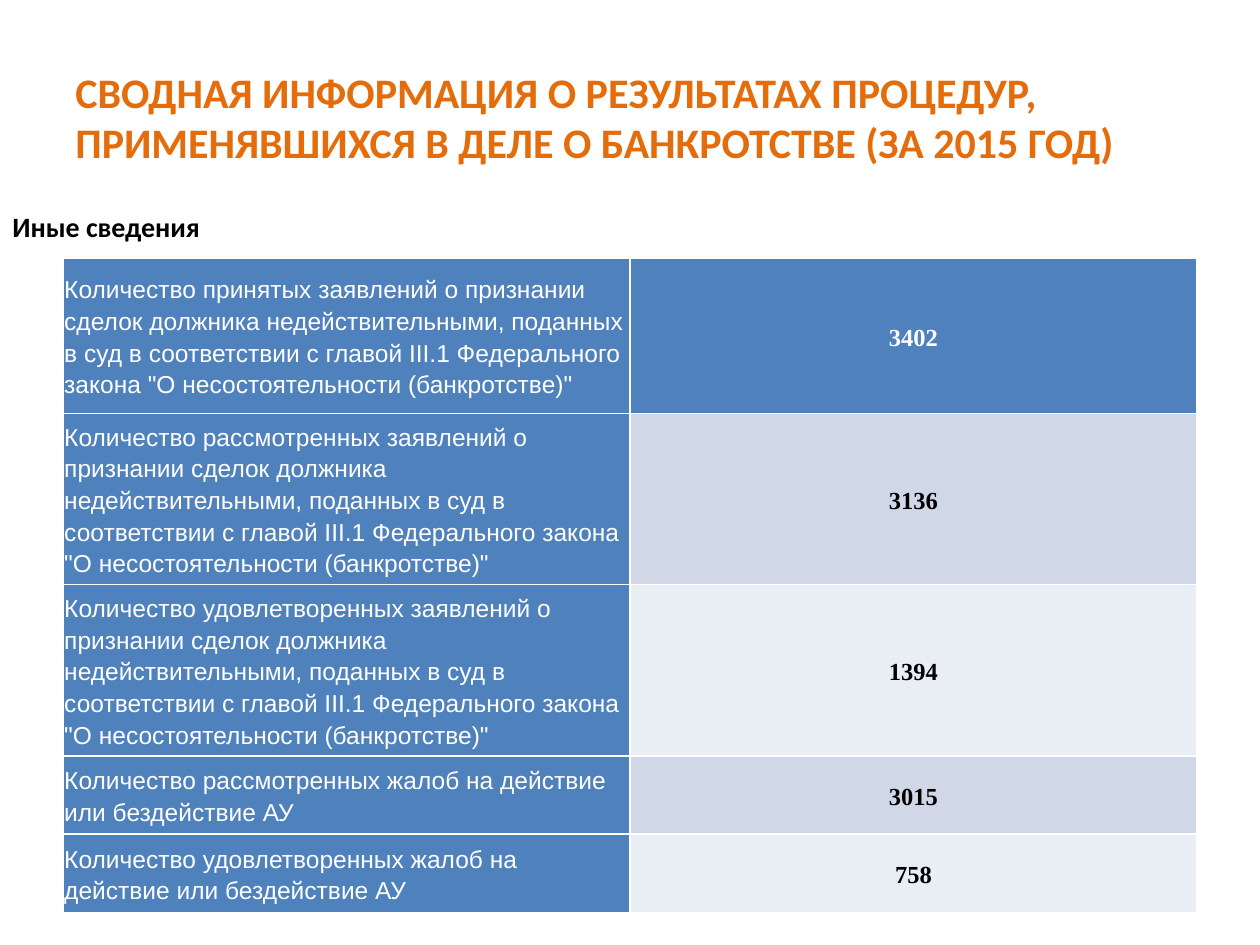
from lxml import etree
from pptx import Presentation
from pptx import util as u
from pptx.dml.color import RGBColor
from pptx.enum import text
from pptx.oxml import ns

COLUMNS, ROWS = 20, 15
WHITE, BLACK, ORANGE, BLUE = "FFFFFF", "000000", "E46C0A", "4F81BD"
BANDS = ("E9EDF4", "D0D8E8")
CLAIMS = ('Количество {} заявлений о признании сделок должника недействительными, '
          'поданных в суд в соответствии с главой III.1 Федерального закона '
          '"О несостоятельности (банкротстве)"')
COMPLAINTS = "Количество {} жалоб на действие или бездействие АУ"
RESULTS = [
    (CLAIMS.format("принятых"), "3402", 2.46),
    (CLAIMS.format("рассмотренных"), "3136", 2.46),
    (CLAIMS.format("удовлетворенных"), "1394", 2.46),
    (COMPLAINTS.format("рассмотренных"), "3015", 1.24),
    (COMPLAINTS.format("удовлетворенных"), "758", 1.24),
]


def color(value):
    return RGBColor.from_string(value)


class SlideBuilder:
    """Holds the presentation, the current slide and its grid and text styles."""

    styles = {
        "title": {"name": "Calibri", "size": u.Pt(24), "bold": True},
        "subtitle": {"name": "Calibri", "size": u.Pt(16), "bold": True},
        "label": {"name": "Arial", "size": u.Pt(14), "bold": False},
        "value": {"name": "Times New Roman", "size": u.Pt(14), "bold": True},
    }

    def __init__(self):
        self.presentation = Presentation()
        self.presentation.slide_width = u.Inches(10)
        self.presentation.slide_height = u.Inches(7.5)
        self.slide = self.presentation.slides.add_slide(self.presentation.slide_layouts[6])

    def x(self, columns):
        return round(self.presentation.slide_width * columns / COLUMNS)

    def y(self, rows):
        return round(self.presentation.slide_height * rows / ROWS)

    def add_text(self, frame, content, style, font_color):
        paragraph = frame.paragraphs[0]
        run = paragraph.add_run()
        run.text = content
        for name, value in self.styles[style].items():
            setattr(run.font, name, value)
        run.font.color.rgb = color(font_color)
        return paragraph

    def text_box(self, area, content, style, font_color, wrap=True):
        left, top, width, height = area
        shape = self.slide.shapes.add_textbox(
            self.x(left), self.y(top), self.x(width), self.y(height))
        shape.text_frame.word_wrap = wrap
        shape.text_frame.vertical_anchor = text.MSO_ANCHOR.MIDDLE
        if not wrap:
            shape.text_frame.auto_size = text.MSO_AUTO_SIZE.SHAPE_TO_FIT_TEXT
        self.add_text(shape.text_frame, content, style, font_color)

    def borders(self, cell):
        properties = cell._tc.get_or_add_tcPr()
        for side in ("lnL", "lnR", "lnT", "lnB"):
            line = etree.SubElement(properties, ns.qn(f"a:{side}"), w=str(u.Pt(1)))
            fill = etree.SubElement(line, ns.qn("a:solidFill"))
            etree.SubElement(fill, ns.qn("a:srgbClr"), val=WHITE)

    def cell(self, cell, content, style, fill, font_color, alignment):
        margins = dict.fromkeys(
            ("margin_left", "margin_right", "margin_top", "margin_bottom"), u.Inches(0.01))
        for name, value in {**margins, "vertical_anchor": text.MSO_ANCHOR.MIDDLE}.items():
            setattr(cell, name, value)
        self.borders(cell)
        cell.fill.solid()
        cell.fill.fore_color.rgb = color(fill)
        paragraph = self.add_text(cell.text_frame, content, style, font_color)
        paragraph.alignment = alignment
        paragraph.line_spacing = 1.15

    def table(self, left, top, width, results):
        height = sum(rows for _, _, rows in results)
        table = self.slide.shapes.add_table(
            len(results), 2, self.x(left), self.y(top), self.x(width), self.y(height)).table
        for index, (label, value, rows) in enumerate(results):
            table.rows[index].height = self.y(rows)
            fill, font_color = (BANDS[index % 2], BLACK) if index else (BLUE, WHITE)
            self.cell(table.cell(index, 0), label, "label", BLUE, WHITE, text.PP_ALIGN.LEFT)
            self.cell(table.cell(index, 1), value, "value", fill, font_color,
                      text.PP_ALIGN.CENTER)


def main():
    builder = SlideBuilder()
    builder.text_box((1, 0.6, 18, 2.5),
                     "СВОДНАЯ ИНФОРМАЦИЯ О РЕЗУЛЬТАТАХ ПРОЦЕДУР, "
                     "ПРИМЕНЯВШИХСЯ В ДЕЛЕ О БАНКРОТСТВЕ (ЗА 2015 ГОД)", "title", ORANGE)
    builder.table(1, 4.1, 18, RESULTS)
    builder.text_box((0, 3.22, 3.42, 0.74), "Иные сведения", "subtitle", BLACK, wrap=False)
    builder.presentation.save("out.pptx")


if __name__ == "__main__":
    main()
